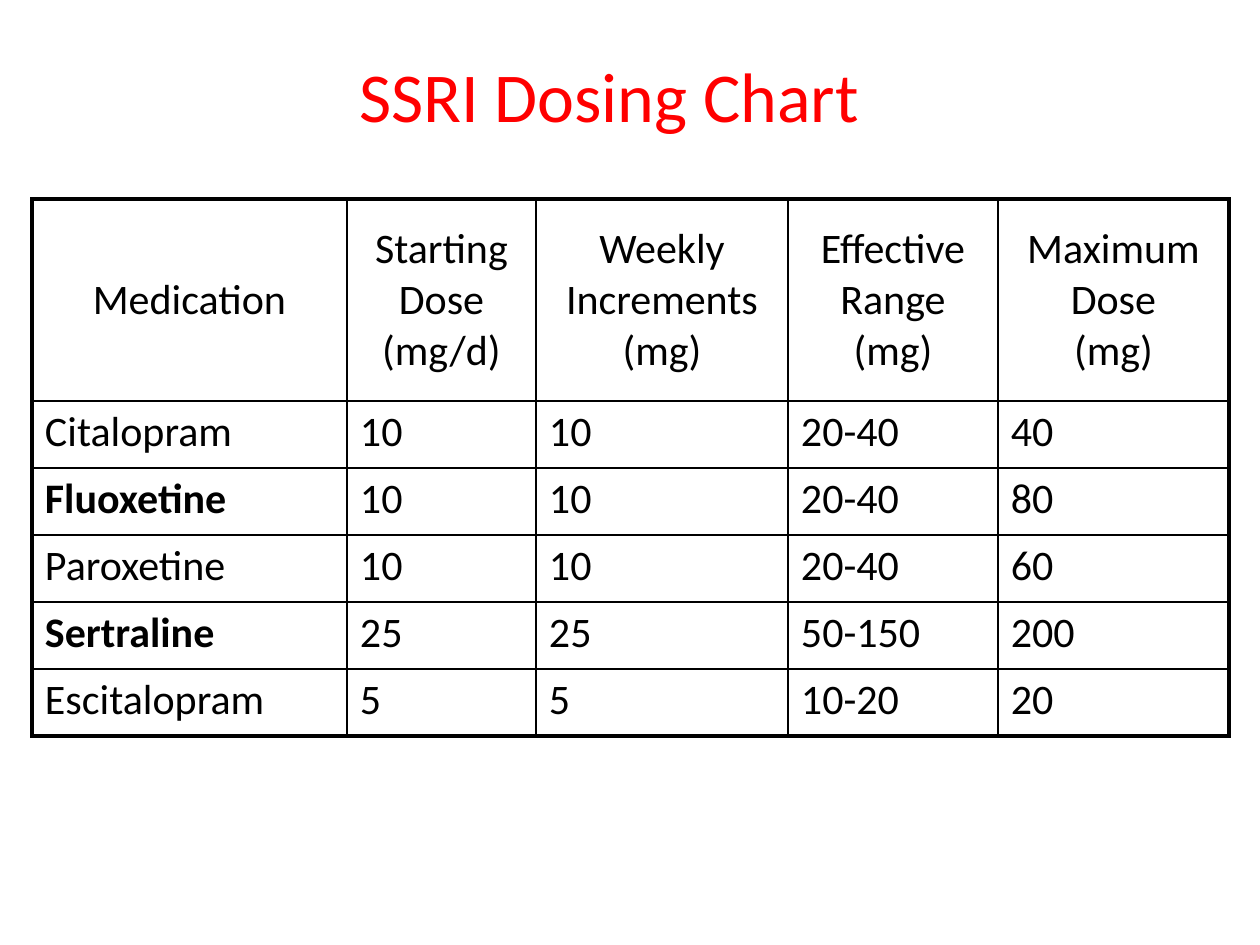
from lxml import etree
from pptx import Presentation
from pptx.dml.color import RGBColor
from pptx.enum.text import MSO_ANCHOR as Anchor, PP_ALIGN as Align
from pptx.oxml.ns import qn
from pptx.util import Pt

TITLE = "SSRI Dosing Chart"
HEADERS = [
    ["Medication"],
    ["Starting", "Dose", "(mg/d)"],
    ["Weekly", "Increments", "(mg)"],
    ["Effective", "Range", "(mg)"],
    ["Maximum", "Dose", "(mg)"],
]
DOSES = [
    ("Citalopram", "10", "10", "20-40", "40"),
    ("Fluoxetine", "10", "10", "20-40", "80"),
    ("Paroxetine", "10", "10", "20-40", "60"),
    ("Sertraline", "25", "25", "50-150", "200"),
    ("Escitalopram", "5", "5", "10-20", "20"),
]
BOLD_NAMES = {"Fluoxetine", "Sertraline"}
COLUMN_WIDTHS = [315, 189, 252, 210, 231]
HEADER_HEIGHT, DOSE_HEIGHT = 202, 67
TABLE_LEFT, TABLE_TOP = 32, 199
FONT, BLACK, RED = "Calibri", "000000", "FF0000"
OUTER, INNER = Pt(2.25), Pt(1)


def px(length):
    return round(length * 914400 / 126)


def color(value):
    return RGBColor.from_string(value)


def write(frame, lines, size=24, ink=BLACK, bold=False, align=Align.LEFT):
    frame.word_wrap = True
    for index, line in enumerate(lines):
        para = frame.add_paragraph() if index else frame.paragraphs[0]
        para.alignment = align
        span = para.add_run()
        span.text = line
        span.font.name = FONT
        span.font.size = Pt(size)
        span.font.bold = bold
        span.font.color.rgb = color(ink)


def set_borders(cell, widths):
    props = cell._tc.get_or_add_tcPr()
    for index, (side, width) in enumerate(widths.items()):
        line = etree.Element(qn(f"a:ln{side}"), w=str(width))
        fill = etree.SubElement(line, qn("a:solidFill"))
        etree.SubElement(fill, qn("a:srgbClr"), val=BLACK)
        props.insert(index, line)


def add_dosing_table(page):
    heights = [HEADER_HEIGHT] + [DOSE_HEIGHT] * len(DOSES)
    last_row, last_column = len(DOSES), len(HEADERS) - 1
    table = page.shapes.add_table(
        len(heights), len(HEADERS), px(TABLE_LEFT), px(TABLE_TOP),
        px(sum(COLUMN_WIDTHS)), px(sum(heights)),
    ).table
    table.first_row = table.horz_banding = False
    for column, width in zip(table.columns, COLUMN_WIDTHS):
        column.width = px(width)
    for row, height in zip(table.rows, heights):
        row.height = px(height)

    rows = [HEADERS] + [[[value] for value in dose] for dose in DOSES]
    for r, row in enumerate(rows):
        for c, lines in enumerate(row):
            cell = table.cell(r, c)
            header = r == 0
            cell.fill.background()
            cell.margin_left = cell.margin_right = px(13)
            cell.margin_top = cell.margin_bottom = px(19 if header else 6)
            cell.vertical_anchor = Anchor.MIDDLE if header else Anchor.TOP
            write(cell.text_frame, lines, bold=lines[0] in BOLD_NAMES,
                  align=Align.CENTER if header else Align.LEFT)
            set_borders(cell, {
                "L": OUTER if c == 0 else INNER,
                "R": OUTER if c == last_column else INNER,
                "T": OUTER if header else INNER,
                "B": OUTER if r == last_row else INNER,
            })


def main():
    deck = Presentation()
    deck.slide_width, deck.slide_height = px(1260), px(945)
    page = deck.slides.add_slide(deck.slide_layouts[6])
    page.background.fill.solid()
    page.background.fill.fore_color.rgb = color("FFFFFF")
    box = page.shapes.add_textbox(px(42), px(23), px(1134), px(142))
    box.text_frame.vertical_anchor = Anchor.MIDDLE
    write(box.text_frame, [TITLE], size=40, ink=RED, align=Align.CENTER)
    add_dosing_table(page)
    deck.save("out.pptx")


if __name__ == "__main__":
    main()
